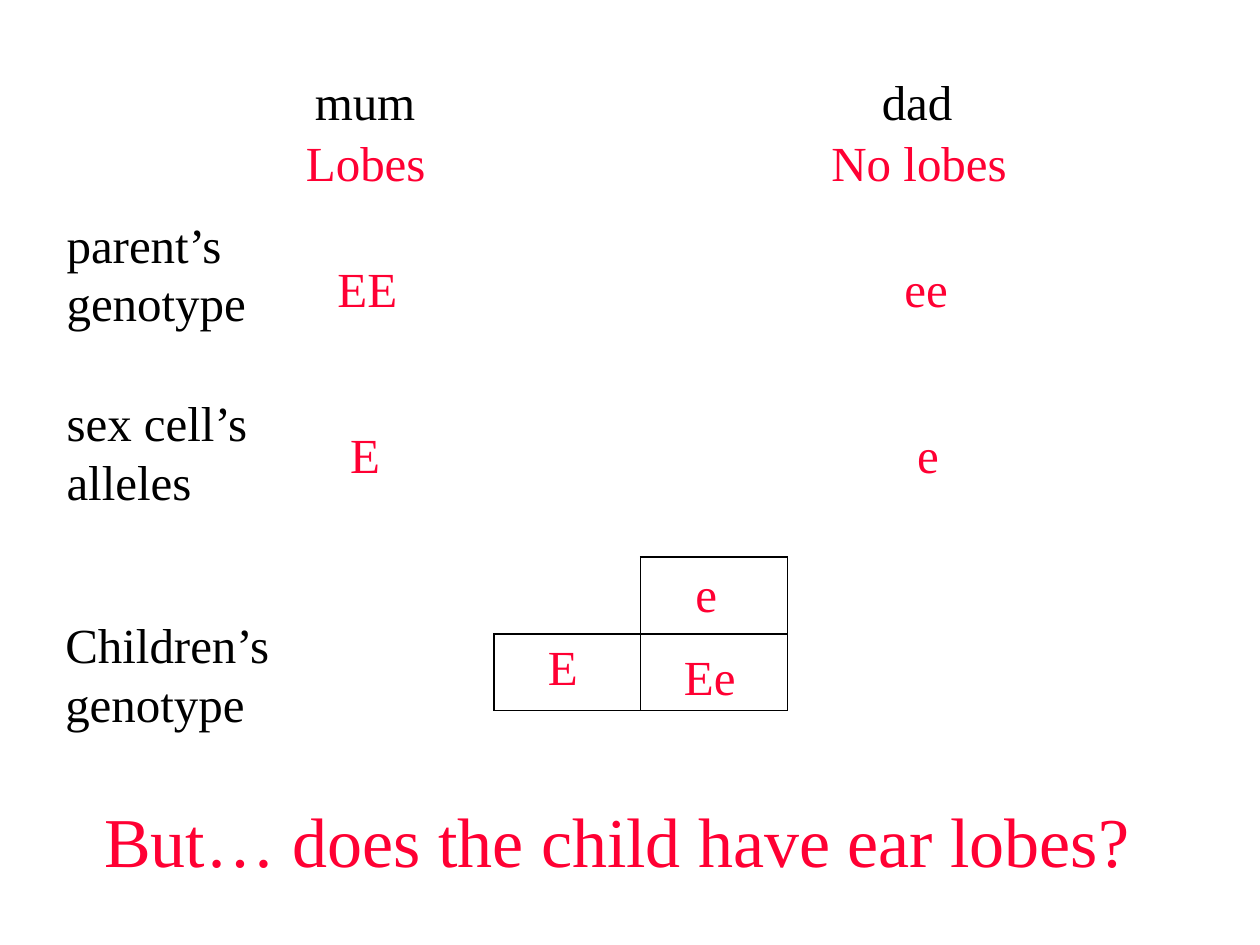
from lxml.etree import SubElement
from pptx import Presentation
from pptx.dml.color import RGBColor
from pptx.enum.text import MSO_AUTO_SIZE
from pptx.oxml.ns import qn
from pptx.util import Inches, Pt

BLACK = "000000"
RED = "FF0033"


def rgb(value):
    return RGBColor.from_string(value)


class SlideBuilder:
    font = "Times New Roman"
    size = 28
    line_height = 0.46
    border_width = 1

    def __init__(self, prs):
        self.s = prs.slides.add_slide(prs.slide_layouts[6])

    def text(self, left, top, width, lines, color=RED, size=None):
        size = size or self.size
        height = 0.11 + self.line_height * len(lines) * size / self.size
        sp = self.s.shapes.add_textbox(Inches(left), Inches(top),
                                       Inches(width), Inches(height))
        tf = sp.text_frame
        tf.word_wrap = False
        tf.auto_size = MSO_AUTO_SIZE.SHAPE_TO_FIT_TEXT
        for i, line in enumerate(lines):
            p = tf.paragraphs[0] if i == 0 else tf.add_paragraph()
            r = p.add_run()
            r.text = line
            r.font.name = self.font
            r.font.size = Pt(size)
            r.font.color.rgb = rgb(color)

    def border(self, cell, sides):
        """Rule the named sides of a cell and clear the others."""
        tcPr = cell._tc.get_or_add_tcPr()
        for side in "LRTB":
            ln = SubElement(tcPr, qn(f"a:ln{side}"),
                            w=str(Pt(self.border_width)))
            if side in sides:
                fill = SubElement(ln, qn("a:solidFill"))
                SubElement(fill, qn("a:srgbClr"), val=BLACK)
            else:
                SubElement(ln, qn("a:noFill"))

    def punnett_square(self, left, top, width, height):
        """Add a 2 by 2 grid whose top left corner is open."""
        table = self.s.shapes.add_table(2, 2, Inches(left), Inches(top),
                                        Inches(width), Inches(height)).table
        table.first_row = False
        table.horz_banding = False
        for row in range(2):
            for col in range(2):
                cell = table.cell(row, col)
                self.border(cell, "LRTB" if row or col else "RB")
                cell.fill.background()


def main():
    prs = Presentation()
    prs.slide_width, prs.slide_height = Inches(10), Inches(7.5)
    slide = SlideBuilder(prs)

    slide.text(2.4, 0.52, 1, ["mum"], BLACK)
    slide.text(6.9, 0.52, 0.76, ["dad"], BLACK)
    slide.text(2.33, 1, 1.15, ["Lobes"])
    slide.text(6.5, 1, 1.59, ["No lobes"])

    row_labels = [
        (0.43, 1.65, 1.62, ["parent’s", "genotype"]),
        (0.43, 3.07, 1.66, ["sex cell’s", "alleles"]),
        (0.42, 4.83, 1.84, ["Children’s", "genotype"]),
    ]
    for left, top, width, lines in row_labels:
        slide.text(left, top, width, lines, BLACK)

    slide.punnett_square(3.92, 4.42, 2.33, 1.22)

    alleles = [
        (2.58, 2, 0.68, "EE"), (7.08, 2, 0.55, "ee"),
        (2.68, 3.32, 0.44, "E"), (7.18, 3.32, 0.37, "e"),
        (4.25, 5, 0.44, "E"), (5.42, 4.42, 0.37, "e"),
        (5.33, 5.08, 0.61, "Ee"),
    ]
    for left, top, width, allele in alleles:
        slide.text(left, top, width, [allele])

    slide.text(0.73, 6.28, 8.35, ["But… does the child have ear lobes?"],
               size=40)
    prs.save("out.pptx")


if __name__ == "__main__":
    main()
